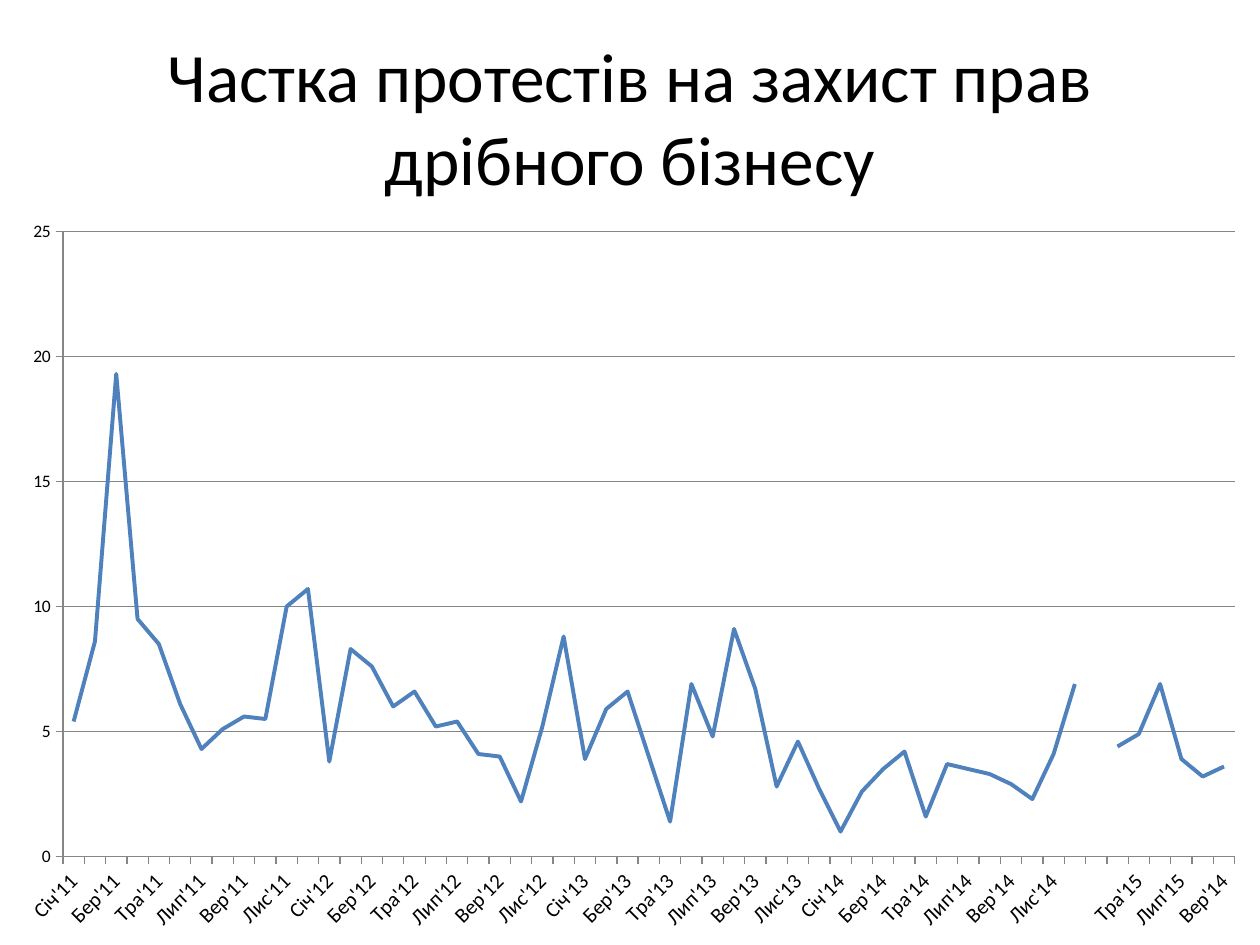
from lxml.etree import SubElement as Sub
from pptx import Presentation
from pptx.chart.data import CategoryChartData as Data
from pptx.dml.color import RGBColor as RGB
from pptx.enum.chart import XL_CHART_TYPE as Kind, XL_TICK_MARK as Tick
from pptx.enum.text import MSO_ANCHOR as Anchor, PP_ALIGN as Align
from pptx.oxml.ns import qn
from pptx.util import Cm, Pt

TITLE = "Частка протестів на захист прав дрібного бізнесу"
MONTHS = ["Січ", "Лют", "Бер", "Кві", "Тра", "Чер",
          "Лип", "Сер", "Вер", "Жов", "Лис", "Гру"]
YEARS = [11, 12, 13, 14]
LAST = ["", "Кві'15", "Тра'15", "Чер'15", "Лип'15", "Сер'15", "Вер'14"]
SHARES = [
    5.4, 8.6, 19.3, 9.5, 8.5, 6.1, 4.3, 5.1, 5.6, 5.5, 10, 10.7,
    3.8, 8.3, 7.6, 6, 6.6, 5.2, 5.4, 4.1, 4, 2.2, 5.2, 8.8,
    3.9, 5.9, 6.6, 4, 1.4, 6.9, 4.8, 9.1, 6.7, 2.8, 4.6, 2.7,
    1, 2.6, 3.5, 4.2, 1.6, 3.7, 3.5, 3.3, 2.9, 2.3, 4.1, 6.9,
    None, 4.4, 4.9, 6.9, 3.9, 3.2, 3.6,
]
PLOT = {"x": 0.05, "y": 0.03, "w": 0.93, "h": 0.85}
COLORS = {"text": "000000", "line": "4F81BD", "axis": "868686"}
FONT = "Calibri"


def style(font, size):
    font.name, font.size = FONT, Pt(size)
    font.color.rgb = RGB.from_string(COLORS["text"])


def stroke(line, color, width):
    line.color.rgb = RGB.from_string(COLORS[color])
    line.width = Pt(width)


def add_title(slide):
    title = slide.shapes.title
    title.left, title.top = Cm(1.27), Cm(0.76)
    title.width, title.height = Cm(22.86), Cm(3.18)
    frame = title.text_frame
    frame.word_wrap = True
    frame.vertical_anchor = Anchor.MIDDLE
    para = frame.paragraphs[0]
    para.alignment = Align.CENTER
    run = para.add_run()
    run.text = TITLE
    style(run.font, 39.6)


def place_plot(chart):
    """Fix the inner plot area as shares of the chart frame."""
    area = chart._chartSpace.chart.plotArea
    for old in area.findall(qn("c:layout")):
        area.remove(old)
    layout = area.makeelement(qn("c:layout"))
    area.insert(0, layout)
    manual = Sub(layout, qn("c:manualLayout"))
    Sub(manual, qn("c:layoutTarget"), val="inner")
    for key in "xy":
        Sub(manual, qn(f"c:{key}Mode"), val="edge")
    for key, share in PLOT.items():
        Sub(manual, qn(f"c:{key}"), val=str(share))


def slant(axis):
    """Turn the labels by 45 degrees and show every second one."""
    node = axis._element
    node.find(qn("c:txPr")).find(qn("a:bodyPr")).set("rot", "-2700000")
    skip = node.makeelement(qn("c:tickLblSkip"), {"val": "2"})
    node.find(qn("c:noMultiLvlLbl")).addprevious(skip)


def add_graph(slide):
    data = Data()
    data.categories = [f"{m}'{y}" for y in YEARS for m in MONTHS] + LAST
    data.add_series("Series 1", SHARES)
    chart = slide.shapes.add_chart(
        Kind.LINE, Cm(0), Cm(4.22), Cm(25.4), Cm(14.83), data).chart
    chart.has_legend = chart.has_title = False
    style(chart.font, 10)

    plot = chart.plots[0]
    plot.vary_by_categories = False
    series = plot.series[0]
    series.smooth = False
    stroke(series.format.line, "line", 2.25)

    cats, vals = chart.category_axis, chart.value_axis
    for axis, size in (cats, 12), (vals, 10):
        axis.major_tick_mark = Tick.OUTSIDE
        axis.minor_tick_mark = Tick.NONE
        stroke(axis.format.line, "axis", 0.75)
        style(axis.tick_labels.font, size)
    vals.minimum_scale, vals.maximum_scale, vals.major_unit = 0, 25, 5
    vals.has_major_gridlines = True
    stroke(vals.major_gridlines.format.line, "axis", 0.75)
    vals.tick_labels.number_format = "0"
    vals.tick_labels.number_format_is_linked = False
    slant(cats)
    place_plot(chart)


def main():
    deck = Presentation()
    deck.slide_width, deck.slide_height = Cm(25.4), Cm(19.05)
    slide = deck.slides.add_slide(deck.slide_layouts[5])
    add_title(slide)
    add_graph(slide)
    deck.save("out.pptx")


if __name__ == "__main__":
    main()
